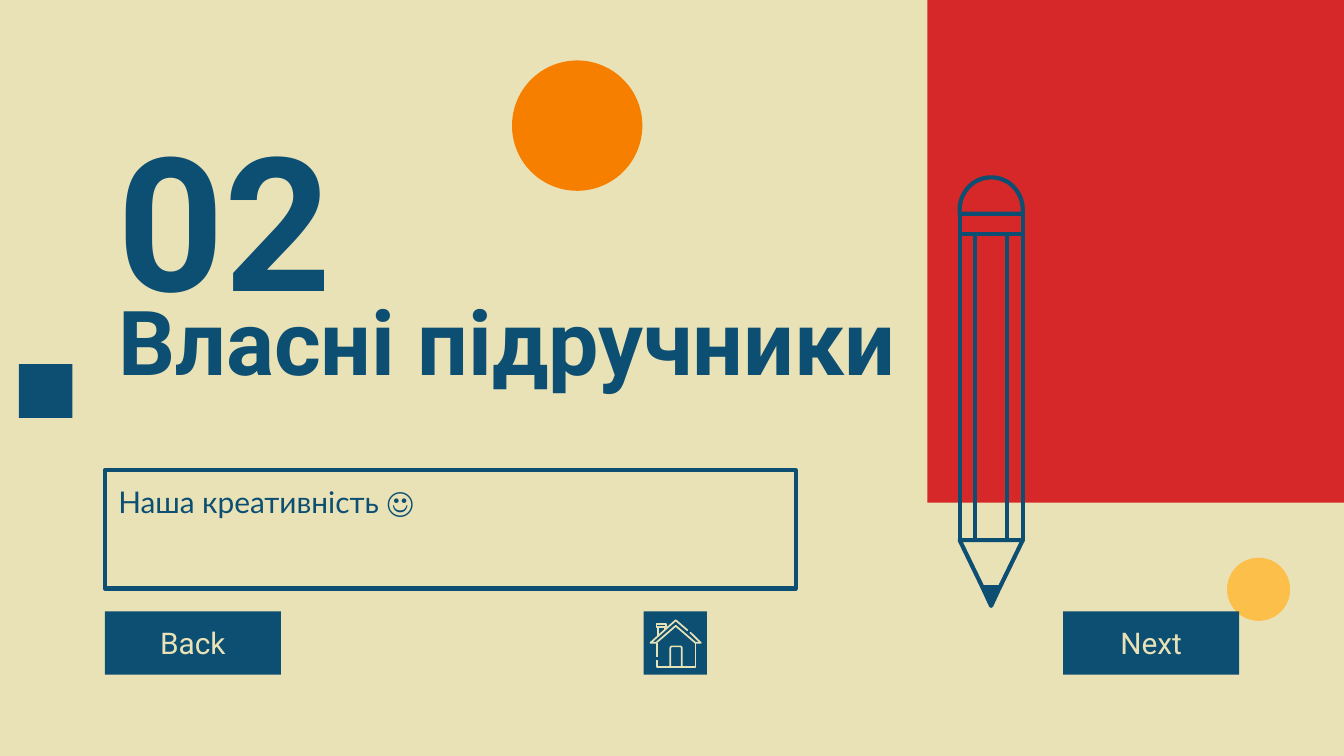
from math import cos, pi, sin

from pptx import Presentation
from pptx.dml.color import RGBColor
from pptx.enum.shapes import MSO_SHAPE as Kind
from pptx.enum.text import MSO_ANCHOR as Anchor, MSO_AUTO_SIZE as Fit, PP_ALIGN as Align
from pptx.util import Inches, Pt

NAVY = RGBColor(0x0C, 0x4F, 0x72)
SAND = RGBColor(0xEA, 0xE2, 0xB7)
RED = RGBColor(0xD6, 0x28, 0x28)
ORANGE = RGBColor(0xF7, 0x7F, 0x00)
YELLOW = RGBColor(0xFC, 0xBF, 0x49)
MIL = Inches(0.001)  # unit of the freeform points


def place(shape, box):
    shape.left, shape.top, shape.width, shape.height = map(Inches, box)


def write(shape, text, size, font, color, anchor, align=Align.LEFT, bold=False):
    frame = shape.text_frame
    frame.word_wrap = True
    frame.auto_size = Fit.NONE
    frame.vertical_anchor = anchor
    frame.margin_left = frame.margin_right = Inches(0.1)
    frame.margin_top = frame.margin_bottom = Inches(0.1)
    para = frame.paragraphs[0]
    para.alignment = align
    para.space_before = Pt(0)
    run = para.add_run()
    run.text = text
    run.font.size = Pt(size)
    run.font.name = font
    run.font.bold = bold
    run.font.color.rgb = color


def block(slide, kind, box, color):
    shape = slide.shapes.add_shape(kind, *map(Inches, box))
    shape.shadow.inherit = False
    shape.fill.solid()
    shape.fill.fore_color.rgb = color
    shape.line.fill.background()
    return shape


def trace(group, box, points, color, width, close=True, fill=False):
    """Outline through points given in mils from the corner of the box."""
    path = group.shapes.build_freeform(*points[0], scale=MIL)
    path.add_line_segments(points[1:], close=close)
    shape = path.convert_to_shape(Inches(box[0]), Inches(box[1]))
    shape.shadow.inherit = False
    if fill:
        shape.fill.solid()
        shape.fill.fore_color.rgb = color
    else:
        shape.fill.background()
    shape.line.color.rgb = color
    shape.line.width = Pt(width)


def heading(slide, box):
    x, y, wide = box
    title, sub = slide.placeholders
    place(title, (x, y + 1.43, 6.27, 0.83))
    write(title, "Власні підручники", 48, "Roboto", NAVY, Anchor.MIDDLE, bold=True)

    # Section number
    number = slide.shapes.add_textbox(*map(Inches, (x, y, wide, 1.55)))
    write(number, "02", 100, "Roboto", NAVY, Anchor.TOP, bold=True)

    # Framed subtitle
    place(sub, (x, y + 2.82, wide, 0.88))
    sub.line.color.rgb = NAVY
    sub.line.width = Pt(2.25)
    write(sub, "Наша креативність ☺", 16, "Lato", NAVY, Anchor.TOP)


def pencil(slide, box):
    group = slide.shapes.add_group_shape()
    wide, tall = (round(side * 1000) for side in box[2:])
    mid = wide / 2
    cap, band, neck, tip = 240, 270, 420, 2700

    def rect(left, top, right, low):
        return [(left, top), (right, top), (right, low), (left, low)]

    arc = [(mid - mid * cos(pi * i / 32), cap - cap * sin(pi * i / 32))
           for i in range(33)]
    lead = [(170, 3050), (300, 3050)]
    parts = [
        arc + [(wide, band), (0, band)],             # eraser
        rect(0, band, wide, neck),                   # ferrule
        rect(0, neck, wide, tip),                    # barrel
        rect(wide / 4, neck, wide * 3 / 4, tip),     # middle face
        [(0, tip), (wide, tip)] + lead[::-1],        # wood
    ]
    for points in parts:
        trace(group, box, points, NAVY, 2.25)
    trace(group, box, lead + [(mid, tall)], NAVY, 2.25, fill=True)


def button(slide, box, label):
    shape = block(slide, Kind.RECTANGLE, box, NAVY)
    write(shape, label, 16, "Roboto", SAND, Anchor.MIDDLE, Align.CENTER)


def home(slide, box):
    block(slide, Kind.RECTANGLE, box, NAVY)
    group = slide.shapes.add_group_shape()
    strokes = [
        # Roof
        [(345, 155), (425, 233), (385, 233), (238, 107), (92, 233), (50, 233),
         (238, 65), (328, 142)],
        # Walls
        [(97, 235), (97, 340)],
        [(97, 362), (97, 415), (385, 415), (385, 235)],
        # Door
        [(198, 415), (198, 270), (206, 260), (276, 260), (284, 270), (284, 415)],
        # Chimney
        [(95, 95), (165, 95), (165, 115), (95, 115), (95, 95)],
        [(107, 115), (107, 180)],
        [(155, 115), (155, 135)],
    ]
    for points in strokes:
        trace(group, box, points, SAND, 0.9, close=False)


def build():
    deck = Presentation()
    deck.slide_width = Inches(10)
    deck.slide_height = deck.slide_width * 9 // 16
    slide = deck.slides.add_slide(deck.slide_layouts[0])
    slide.background.fill.solid()
    slide.background.fill.fore_color.rgb = SAND

    heading(slide, (0.78, 0.68, 5.14))
    block(slide, Kind.RECTANGLE, (6.9, 0, 3.1, 3.74), RED)
    pencil(slide, (7.14, 1.32, 0.47, 3.19))

    # Loose ornaments
    block(slide, Kind.RECTANGLE, (0.14, 2.71, 0.4, 0.4), NAVY)
    block(slide, Kind.OVAL, (3.81, 0.45, 0.97, 0.97), ORANGE)
    block(slide, Kind.OVAL, (9.13, 4.15, 0.47, 0.47), YELLOW)

    # Navigation row
    button(slide, (0.78, 4.55, 1.31, 0.47), "Back")
    home(slide, (4.79, 4.55, 0.47, 0.47))
    button(slide, (7.91, 4.55, 1.31, 0.47), "Next")
    deck.save("out.pptx")


if __name__ == "__main__":
    build()
